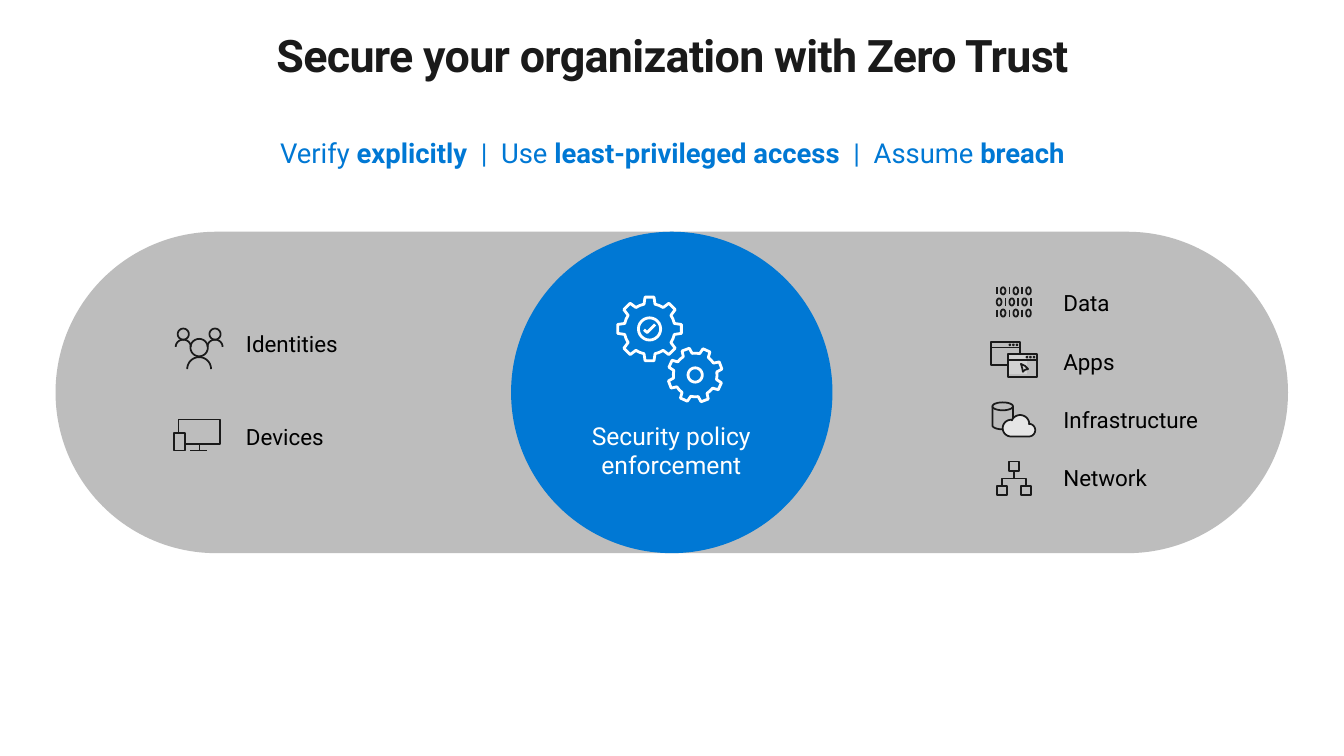
from dataclasses import dataclass
from math import cos, radians, sin

from pptx import Presentation
from pptx.dml.color import RGBColor
from pptx.enum.shapes import MSO_SHAPE
from pptx.enum.text import MSO_ANCHOR, PP_ALIGN
from pptx.util import Cm, Pt

RECT, ROUNDED, OVAL = MSO_SHAPE.RECTANGLE, MSO_SHAPE.ROUNDED_RECTANGLE, MSO_SHAPE.OVAL
TOP, MIDDLE = MSO_ANCHOR.TOP, MSO_ANCHOR.MIDDLE
LEFT, CENTER = PP_ALIGN.LEFT, PP_ALIGN.CENTER


@dataclass(frozen=True)
class Theme:
    font: str = "Roboto"
    ink: str = "1A1A1A"
    black: str = "000000"
    white: str = "FFFFFF"
    blue: str = "0078D4"
    band: str = "BDBDBD"
    window: str = "D2D2D2"
    cloud: str = "E6E6E6"
    title: float = 32
    principle: float = 19.6
    hub: float = 17.6
    label: float = 16
    thin: float = 1.25
    thick: float = 2


T = Theme()

TITLE = [("Secure your organization with Zero Trust", True)]
PRINCIPLES = [
    ("Verify", False), (" explicitly  ", True),
    ("|  Use ", False), ("least-privileged access  ", True),
    ("|  Assume", False), (" breach", True),
]
HUB = [("Security policy enforcement", False)]
SOURCES = [("Identities", 5.03), ("Devices", 5.03)]
RESOURCES = [("Data", 1.78), ("Apps", 1.85), ("Infrastructure", 4.19), ("Network", 3)]
LABEL_COLUMNS = [(SOURCES, 6.2, 7.92, 2.32), (RESOURCES, 26.8, 6.88, 1.47)]
BITS = ["101010", "010101", "101010"]

PHONE = (4.39, 10.92, 0.28, 0.43)
MONITOR = [(4.67, 11.18), (5.54, 11.18), (5.54, 10.57), (4.5, 10.57), (4.5, 10.92)]
STAND = [[(5.03, 11.18), (5.03, 11.35)], [(4.8, 11.35), (5.23, 11.35)]]
WINDOWS = [(24.97, 8.61), (25.4, 8.92)]
CURSOR = [(25.73, 9.17), (25.83, 9.22), (25.91, 9.3), (25.83, 9.32),
          (25.78, 9.37), (25.76, 9.27), (25.73, 9.17)]
NODES = [(25.12, 12.24), (25.73, 12.24), (25.43, 11.63)]
LINKS = [[(25.55, 11.87), (25.55, 12.06)],
         [(25.86, 12.24), (25.86, 12.06), (25.25, 12.06), (25.25, 12.24)]]
CHECK = [(16.23, 8.31), (16.31, 8.38), (16.51, 8.18)]

prs = Presentation()
prs.slide_width, prs.slide_height = Cm(33.87), Cm(19.05)
s = prs.slides.add_slide(prs.slide_layouts[6])


def rgb(color):
    return RGBColor.from_string(color)


def paint(sp, fill=None, line=None, width=T.thin):
    sp.shadow.inherit = False
    if fill:
        sp.fill.solid()
        sp.fill.fore_color.rgb = rgb(fill)
    else:
        sp.fill.background()
    if line:
        sp.line.color.rgb = rgb(line)
        sp.line.width = Pt(width)
    else:
        sp.line.fill.background()


def shape(kind, box, fill):
    sp = s.shapes.add_shape(kind, *map(Cm, box))
    paint(sp, fill)
    return sp


def text(runs, box, size, color, align=LEFT, anchor=TOP,
         insets=(0.25, 0.13, 0.25, 0.13), spacing=None):
    tf = s.shapes.add_textbox(*map(Cm, box)).text_frame
    tf.word_wrap = True
    tf.vertical_anchor = anchor
    tf.margin_left, tf.margin_top, tf.margin_right, tf.margin_bottom = map(Cm, insets)
    p = tf.paragraphs[0]
    p.alignment = align
    p.font.name, p.font.size, p.font.color.rgb = T.font, Pt(size), rgb(color)
    for wording, bold in runs:
        r = p.add_run()
        r.text = wording
        r.font.bold = bold
        if spacing:
            r.font._element.set("spc", str(spacing))


def draw(contours, fill=None, line=T.ink, width=T.thin):
    outline = None
    for contour in contours:
        start, *rest = [(Cm(x), Cm(y)) for x, y in contour]
        if outline is None:
            outline = s.shapes.build_freeform(*start)
        else:
            outline.move_to(*start)
        outline.add_line_segments(rest, close=contour[0] == contour[-1])
    paint(outline.convert_to_shape(), fill, line, width)


def polar(cx, cy, radius, angle):
    return cx + radius * cos(radians(angle)), cy + radius * sin(radians(angle))


def arc(cx, cy, rx, ry, start=0, end=360, steps=24):
    angles = [radians(start + (end - start) * i / steps) for i in range(steps + 1)]
    return [(cx + rx * cos(a), cy + ry * sin(a)) for a in angles]


def ring(cx, cy, radius):
    points = arc(cx, cy, radius, radius)
    return points[:-1] + points[:1]


def frame(x, y, w, h):
    return [(x, y), (x + w, y), (x + w, y + h), (x, y + h), (x, y)]


def gear(cx, cy, outer, inner, turn):
    profile = [(-12.5, inner), (-8, outer), (8, outer), (12.5, inner), (22.5, inner)]
    points = [polar(cx, cy, radius, turn + 45 * tooth + angle)
              for tooth in range(8) for angle, radius in profile]
    return points + points[:1]


def people():
    contours = [ring(5.02, 8.76, 0.22), arc(5.02, 9.3, 0.3, 0.3, 180, 360)]
    for x in (4.62, 5.42):
        contours += [ring(x, 8.42, 0.14), arc(x, 8.74, 0.19, 0.18, 180, 360)]
    return contours


def binary():
    contours = []
    for row, bits in enumerate(BITS):
        y = 7.33 + 0.28 * row
        for col, bit in enumerate(bits):
            x = 25.12 + 0.06 * (row % 2) + 0.16 * col
            contours.append([(x, y - 0.09), (x, y + 0.09)] if bit == "1"
                            else arc(x, y, 0.06, 0.09))
    return contours


def window(x, y):
    dots = [ring(x + dx, y + 0.08, 0.01) for dx in (0.48, 0.57, 0.66)]
    return [frame(x, y, 0.74, 0.58), [(x, y + 0.15), (x + 0.74, y + 0.15)]] + dots


def cylinder():
    body = [(25.53, 10.24)] + arc(25.27, 10.72, 0.26, 0.1, 0, 180) + [(25.01, 10.24)]
    return [body, arc(25.27, 10.24, 0.26, 0.1)]


def cloud():
    points = (arc(25.48, 10.79, 0.21, 0.21, 90, 270)
              + arc(25.71, 10.69, 0.23, 0.23, 205, 360)
              + arc(25.93, 10.84, 0.16, 0.16, 270, 450))
    return [points + points[:1]]


text(TITLE, (2.34, 0.69, 29.21, 1.83), T.title, T.ink, CENTER,
     insets=(0, 0, 0, 0), spacing=-50)
text(PRINCIPLES, (6.53, 3.3, 20.83, 1.09), T.principle, T.blue, CENTER)

band = shape(ROUNDED, (1.4, 5.84, 31.06, 8.1), T.band)
band.adjustments[0] = 0.5
shape(OVAL, (12.88, 5.84, 8.1, 8.1), T.blue)
text(HUB, (12.83, 10.44, 8.18, 1.8), T.hub, T.white, CENTER, MIDDLE,
     insets=(0.5, 0.13, 0.5, 0.13))

for labels, x, y, step in LABEL_COLUMNS:
    for i, (label, width) in enumerate(labels):
        text([(label, False)], (x, y + i * step, width, 1.5), T.label, T.black,
             anchor=MIDDLE, insets=(0, 0.41, 0.51, 0.41))

draw(people())
draw([frame(*PHONE), MONITOR] + STAND)
draw(binary())
back_window, front_window = WINDOWS
draw(window(*back_window))
shape(RECT, (*front_window, 0.48, 0.51), T.window)
draw(window(*front_window))
draw([CURSOR])
draw(cylinder())
draw(cloud(), T.cloud)
draw([frame(x, y, 0.25, 0.24) for x, y in NODES] + LINKS)

for contours in ([gear(16.37, 8.29, 0.81, 0.64, 0)],
                 [ring(17.52, 9.45, 0.18)],
                 [gear(17.52, 9.45, 0.69, 0.55, -20.5)],
                 [ring(16.37, 8.29, 0.28), CHECK]):
    draw(contours, line=T.white, width=T.thick)

prs.save("out.pptx")
